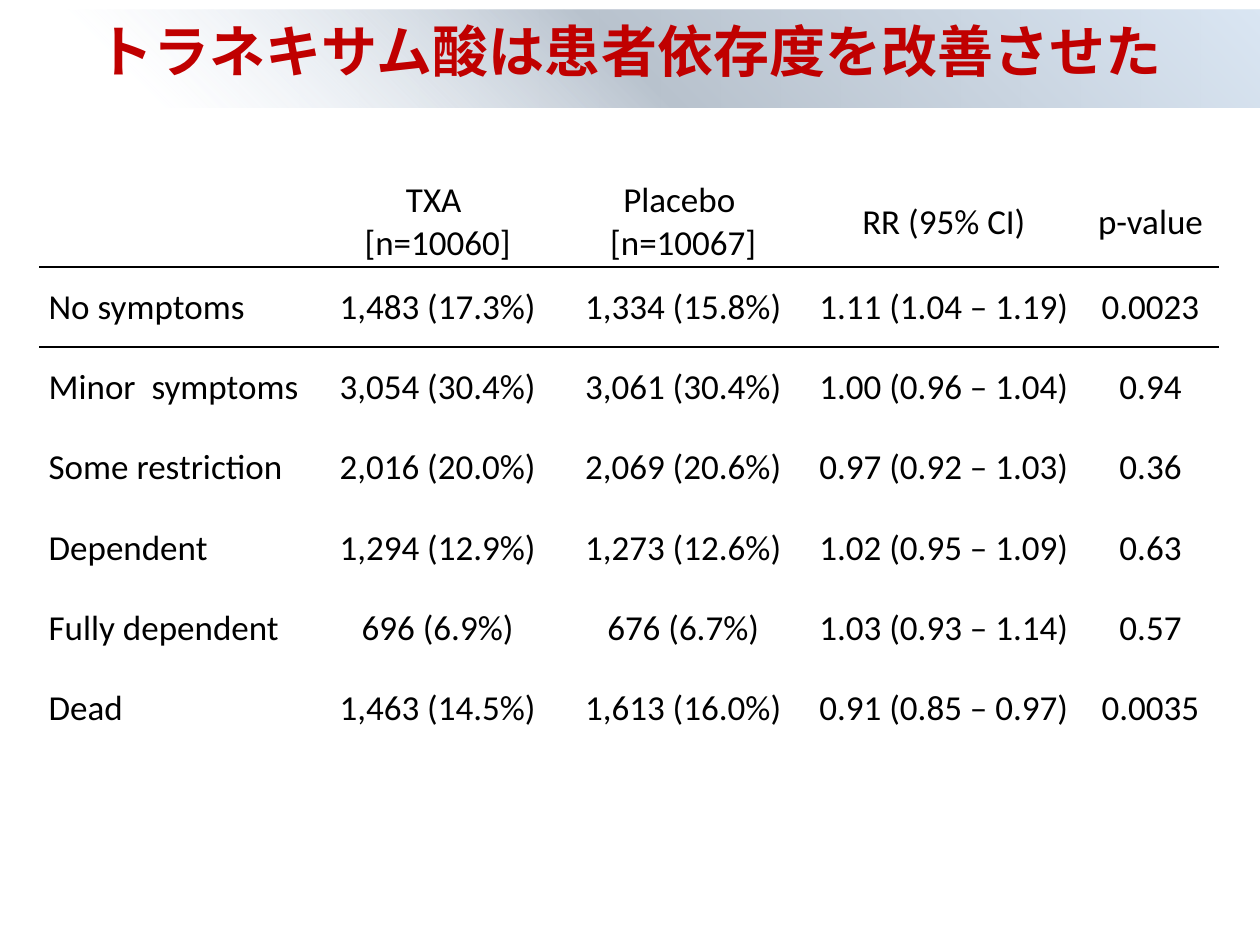
from lxml import etree
from pptx import Presentation
from pptx.dml.color import RGBColor
from pptx.enum.shapes import MSO_SHAPE
from pptx.enum.text import MSO_ANCHOR, PP_ALIGN
from pptx.oxml.ns import qn
from pptx.util import Cm, Pt

RECTANGLE = MSO_SHAPE.RECTANGLE
TOP, MIDDLE = MSO_ANCHOR.TOP, MSO_ANCHOR.MIDDLE
LEFT, CENTER = PP_ALIGN.LEFT, PP_ALIGN.CENTER
NO_STYLE = "{2D5ABB26-0587-4C30-8999-92F81FD0307C}"

TITLE = "トラネキサム酸は患者依存度を改善させた"
BANNER_STOPS = [(12, "DCE6F2", 0), (50, "B8C2CD", 100), (100, "DAE6F3", 100)]
COLUMN_WIDTHS = [5.56, 4.95, 4.95, 5.56, 2.77]
HEADER_HEIGHT, ROW_HEIGHT = 1.8, 1.62
OUTCOMES = [
    ["", "TXA \n[n=10060]", "Placebo \n[n=10067]", "RR (95% CI)", "p-value"],
    ["No symptoms", "1,483 (17.3%)", "1,334 (15.8%)", "1.11 (1.04 – 1.19)", "0.0023"],
    ["Minor  symptoms", "3,054 (30.4%)", "3,061 (30.4%)", "1.00 (0.96 – 1.04)", "0.94"],
    ["Some restriction", "2,016 (20.0%)", "2,069 (20.6%)", "0.97 (0.92 – 1.03)", "0.36"],
    ["Dependent", "1,294 (12.9%)", "1,273 (12.6%)", "1.02 (0.95 – 1.09)", "0.63"],
    ["Fully dependent", "696 (6.9%)", "676 (6.7%)", "1.03 (0.93 – 1.14)", "0.57"],
    ["Dead", "1,463 (14.5%)", "1,613 (16.0%)", "0.91 (0.85 – 0.97)", "0.0035"],
]


def color(value):
    return RGBColor.from_string(value)


def add_color(parent, value):
    return etree.SubElement(parent, qn("a:srgbClr"), val=value)


class SlideBuilder:
    font = "Calibri"
    ink = "000000"
    accent = "C00000"

    def __init__(self, slide):
        self.slide = slide

    def add_text(self, paragraph, text, size, ink, bold=False, align=CENTER):
        paragraph.alignment = align
        run = paragraph.add_run()
        run.text = text
        run.font.name = self.font
        run.font.size = Pt(size)
        run.font.bold = bold
        run.font.color.rgb = color(ink)

    def fill_gradient(self, shape, stops, angle):
        shape.fill.gradient()
        shape.fill.gradient_angle = angle
        stop_list = shape._element.spPr.find(qn("a:gradFill")).find(qn("a:gsLst"))
        stop_list.clear()
        for position, value, opacity in stops:
            stop = etree.SubElement(stop_list, qn("a:gs"), pos=str(position * 1000))
            stop_color = add_color(stop, value)
            if opacity < 100:
                etree.SubElement(stop_color, qn("a:alpha"), val=str(opacity * 1000))

    def banner(self, text, left, top, width, height):
        shape = self.slide.shapes.add_shape(
            RECTANGLE, Cm(left), Cm(top), Cm(width), Cm(height))
        shape.shadow.inherit = False
        shape.line.fill.background()
        self.fill_gradient(shape, BANNER_STOPS, 45)
        frame = shape.text_frame
        frame.word_wrap = True
        frame.vertical_anchor = TOP
        paragraph = frame.paragraphs[0]
        self.add_text(paragraph, text, 32, self.accent, bold=True)
        spacing = etree.SubElement(paragraph._p.get_or_add_pPr(), qn("a:spcBef"))
        etree.SubElement(spacing, qn("a:spcPct"), val="30000")

    def border(self, cell, side):
        properties = cell._tc.get_or_add_tcPr()
        line = etree.Element(qn(f"a:{side}"), w=str(Pt(1)))
        add_color(etree.SubElement(line, qn("a:solidFill")), self.ink)
        properties.insert(0, line)

    def cell(self, cell, text, align):
        cell.fill.background()
        cell.vertical_anchor = MIDDLE
        cell.margin_left = cell.margin_right = Cm(0.19)
        cell.margin_top = cell.margin_bottom = 0
        frame = cell.text_frame
        for index, line in enumerate(text.split("\n")):
            paragraph = frame.add_paragraph() if index else frame.paragraphs[0]
            if line:
                self.add_text(paragraph, line, 20, self.ink, align=align)

    def table(self, rows, left, top):
        heights = [HEADER_HEIGHT] + [ROW_HEIGHT] * (len(rows) - 1)
        table = self.slide.shapes.add_table(
            len(rows), len(COLUMN_WIDTHS), Cm(left), Cm(top),
            Cm(sum(COLUMN_WIDTHS)), Cm(sum(heights))).table
        table._tbl.tblPr.find(qn("a:tableStyleId")).text = NO_STYLE
        table.horz_banding = False
        for column, width in zip(table.columns, COLUMN_WIDTHS):
            column.width = Cm(width)
        for row, height, texts in zip(table.rows, heights, rows):
            row.height = Cm(height)
            for index, (cell, text) in enumerate(zip(row.cells, texts)):
                self.cell(cell, text, CENTER if index else LEFT)
        for side, row_index in (("lnB", 0), ("lnT", 1)):
            for cell in table.rows[row_index].cells:
                self.border(cell, side)


def main():
    presentation = Presentation()
    presentation.slide_width = Cm(25.4)
    presentation.slide_height = Cm(19.05)
    slide = presentation.slides.add_slide(presentation.slide_layouts[6])
    builder = SlideBuilder(slide)
    builder.table(OUTCOMES, 0.79, 3.58)
    builder.banner(TITLE, 0, 0.2, 25.4, 1.96)
    presentation.save("out.pptx")


if __name__ == "__main__":
    main()
